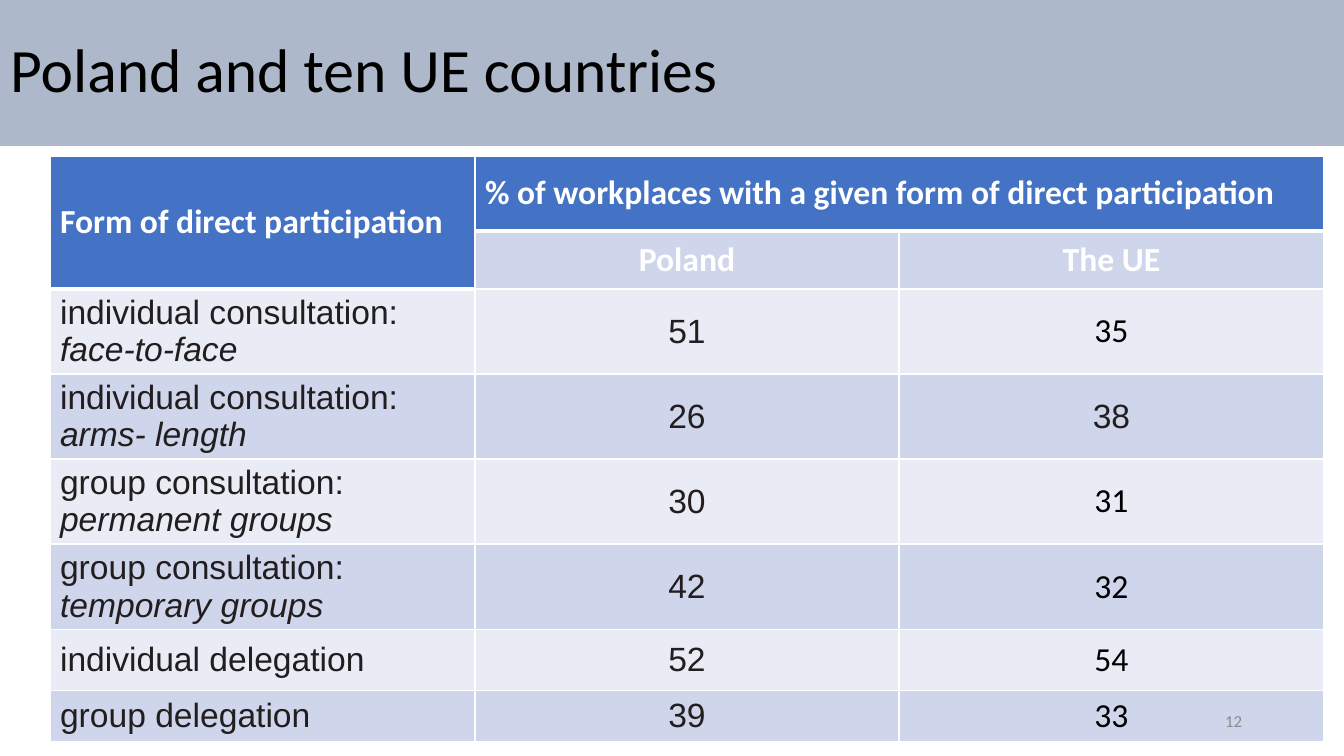
from dataclasses import dataclass

from lxml import etree
from pptx import Presentation
from pptx import util as u
from pptx.dml.color import RGBColor
from pptx.enum import text
from pptx.oxml.ns import qn

PX = 9144000 / 1008


@dataclass(frozen=True)
class Theme:
    heading_font: str = "Calibri"
    body_font: str = "Arial"
    banner: str = "ADB9CA"
    header: str = "4472C4"
    dark_band: str = "CFD5EA"
    light_band: str = "E9EBF5"
    white: str = "FFFFFF"
    black: str = "000000"
    ink: str = "221E1F"
    muted: str = "8C8C8C"
    title_size: int = 44
    table_size: int = 24
    number_size: int = 12


THEME = Theme()
COLUMN_WIDTHS = [425, 424, 425]
ROW_HEIGHTS = [75, 58, 85, 85, 85, 85, 61, 51]
PARTICIPATION = [
    ("individual consultation: ", "face-to-face", 51, 35),
    ("individual consultation: ", "arms- length", 26, 38),
    ("group consultation: ", "permanent groups", 30, 31),
    ("group consultation: ", "temporary groups", 42, 32),
    ("individual delegation", "", 52, 54),
    ("group delegation", "", 39, 33),
]
BODY_FONT_UE_ROW = 1


def px(length):
    return u.Emu(round(length * PX))


def set_font(paragraph, name, size, color, bold=False):
    font = paragraph.font
    font.name, font.size, font.bold = name, u.Pt(size), bold
    font.color.rgb = RGBColor.from_string(color)


def set_borders(cell, top, bottom):
    properties = cell._tc.get_or_add_tcPr()
    widths = {"lnL": 1, "lnR": 1, "lnT": top, "lnB": bottom}
    for position, (side, width) in enumerate(widths.items()):
        line = etree.Element(qn(f"a:{side}"), w=str(u.Pt(width)))
        fill = etree.SubElement(line, qn("a:solidFill"))
        etree.SubElement(fill, qn("a:srgbClr"), val=THEME.white)
        properties.insert(position, line)


def fill_cell(cell, runs, font_name, color, bold=False, centred=False):
    cell.vertical_anchor = text.MSO_ANCHOR.MIDDLE
    paragraph = cell.text_frame.paragraphs[0]
    paragraph.alignment = text.PP_ALIGN.CENTER if centred else text.PP_ALIGN.LEFT
    set_font(paragraph, font_name, THEME.table_size, color, bold)
    for words, italic in runs:
        run = paragraph.add_run()
        run.text = words
        if italic:
            run.font.italic = True


def place_title(slide, left, top, width, height):
    title = slide.shapes.title
    title.left, title.top, title.width, title.height = map(px, (left, top, width, height))
    title.fill.solid()
    title.fill.fore_color.rgb = RGBColor.from_string(THEME.banner)
    frame = title.text_frame
    frame.text = "Poland and ten UE countries"
    frame.auto_size = text.MSO_AUTO_SIZE.NONE
    frame.vertical_anchor = text.MSO_ANCHOR.MIDDLE
    paragraph = frame.paragraphs[0]
    paragraph.alignment = text.PP_ALIGN.LEFT
    paragraph.line_spacing = 0.9
    set_font(paragraph, THEME.heading_font, THEME.title_size, THEME.black)


def place_table(slide, left, top):
    table = slide.shapes.add_table(
        len(ROW_HEIGHTS), len(COLUMN_WIDTHS), px(left), px(top),
        px(sum(COLUMN_WIDTHS)), px(sum(ROW_HEIGHTS))).table
    for column, width in zip(table.columns, COLUMN_WIDTHS):
        column.width = px(width)
    for row, height in zip(table.rows, ROW_HEIGHTS):
        row.height = px(height)

    for row_index in range(len(ROW_HEIGHTS)):
        for column_index in range(len(COLUMN_WIDTHS)):
            cell = table.cell(row_index, column_index)
            in_header = row_index == 0 or (row_index == 1 and column_index == 0)
            band = THEME.dark_band if row_index % 2 else THEME.light_band
            cell.fill.solid()
            cell.fill.fore_color.rgb = RGBColor.from_string(
                THEME.header if in_header else band)
            below_header = row_index == (2 if column_index == 0 else 1)
            set_borders(cell, 3 if below_header else 1, 3 if in_header else 1)

    table.cell(0, 0).merge(table.cell(1, 0))
    table.cell(0, 1).merge(table.cell(0, 2))
    headings = [
        (0, 0, "Form of direct participation"),
        (0, 1, "% of workplaces with a given form of direct participation"),
        (1, 1, "Poland"),
        (1, 2, "The UE"),
    ]
    for row_index, column_index, words in headings:
        fill_cell(table.cell(row_index, column_index), [(words, False)],
                  THEME.heading_font, THEME.white, bold=True, centred=row_index == 1)

    for index, (form, variant, poland, ue) in enumerate(PARTICIPATION):
        label, poland_cell, ue_cell = table.rows[index + 2].cells
        runs = [(form, False)] + ([(variant, True)] if variant else [])
        fill_cell(label, runs, THEME.body_font, THEME.ink)
        body_style = (THEME.body_font, THEME.ink)
        heading_style = (THEME.heading_font, THEME.black)
        ue_style = body_style if index == BODY_FONT_UE_ROW else heading_style
        fill_cell(poland_cell, [(str(poland), False)], *body_style, centred=True)
        fill_cell(ue_cell, [(str(ue), False)], *ue_style, centred=True)


def place_slide_number(slide, left, top, width, height):
    box = slide.shapes.add_textbox(*map(px, (left, top, width, height)))
    frame = box.text_frame
    frame.word_wrap = True
    frame.vertical_anchor = text.MSO_ANCHOR.MIDDLE
    frame.text = "12"
    paragraph = frame.paragraphs[0]
    paragraph.alignment = text.PP_ALIGN.RIGHT
    set_font(paragraph, THEME.heading_font, THEME.number_size, THEME.muted)


def main():
    presentation = Presentation()
    presentation.slide_width, presentation.slide_height = px(1344), px(756)
    slide = presentation.slides.add_slide(presentation.slide_layouts[5])
    place_title(slide, 0, 0, 1344, 146)
    place_table(slide, 50, 156)
    place_slide_number(slide, 950, 701, 302, 40)
    presentation.save("out.pptx")


if __name__ == "__main__":
    main()
